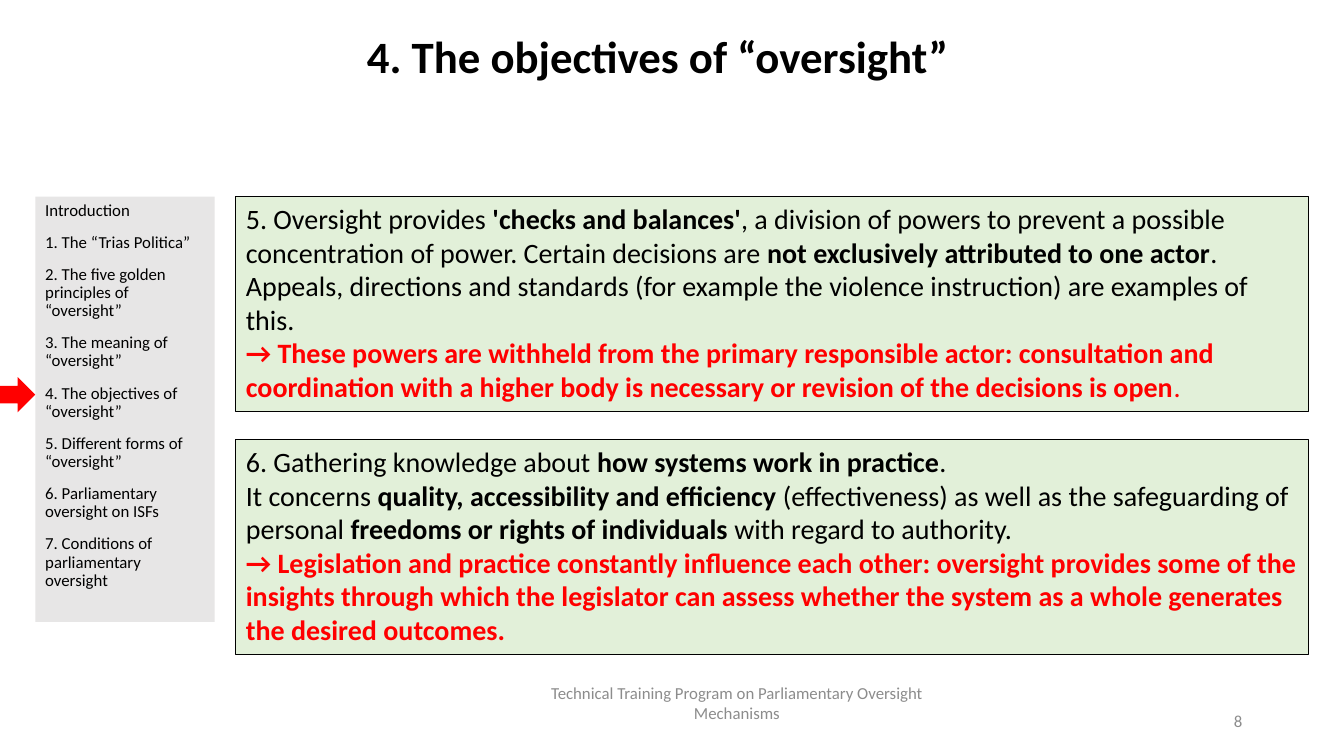
from pptx import Presentation
from pptx.dml.color import RGBColor
from pptx.enum.shapes import MSO_SHAPE
from pptx.enum.text import MSO_ANCHOR, PP_ALIGN
from pptx.util import Inches, Pt

deck = Presentation()
deck.slide_width = Inches(13.33)
deck.slide_height = Inches(7.5)
page = deck.slides.add_slide(deck.slide_layouts[6])


def add_box(left, top, width, height, kind=MSO_SHAPE.RECTANGLE, fill=None, line=None, anchor=MSO_ANCHOR.TOP):
    box = page.shapes.add_shape(kind, Inches(left), Inches(top), Inches(width), Inches(height))
    box.shadow.inherit = False
    if fill:
        box.fill.solid()
        box.fill.fore_color.rgb = RGBColor.from_string(fill)
    else:
        box.fill.background()
    if line:
        box.line.color.rgb = RGBColor.from_string(line)
        box.line.width = Pt(0.75)
    else:
        box.line.fill.background()
    box.text_frame.word_wrap = True
    box.text_frame.vertical_anchor = anchor
    return box


def write(box, text, size=12, color="000000", align=PP_ALIGN.LEFT, spacing=1.0, before=0):
    para = box.text_frame.paragraphs[0]
    if para.runs:
        para = box.text_frame.add_paragraph()
        para.space_before = Pt(before)
    para.alignment = align
    para.line_spacing = spacing
    for index, part in enumerate(text.split("**")):
        if part:
            span = para.add_run()
            span.text = part
            span.font.name = "Calibri"
            span.font.size = Pt(size)
            span.font.bold = index % 2 == 1
            span.font.color.rgb = RGBColor.from_string(color)


footer = add_box(5.06, 6.77, 4.5, 0.4, anchor=MSO_ANCHOR.MIDDLE)
write(footer, "Technical Training Program on Parliamentary Oversight Mechanisms",
      color="8C8C8C", align=PP_ALIGN.CENTER)
number = add_box(9.42, 6.95, 3, 0.4, anchor=MSO_ANCHOR.MIDDLE)
write(number, "8", color="8C8C8C", align=PP_ALIGN.RIGHT)

agenda = add_box(0.35, 1.95, 1.78, 4.22, fill="E7E6E6")
for topic in [
    "Introduction",
    "1. The “Trias Politica”",
    "2. The five golden principles of “oversight”",
    "3. The meaning of “oversight”",
    "4. The objectives of “oversight”",
    "5. Different forms of “oversight”",
    "6. Parliamentary oversight on ISFs",
    "7. Conditions of parliamentary oversight",
]:
    write(agenda, topic, spacing=0.9, before=10)
add_box(-0.11, 3.74, 0.46, 0.35, kind=MSO_SHAPE.RIGHT_ARROW, fill="FF0000")

title = add_box(3, 0.3, 7.05, 1.25)
write(title, "**4. The objectives of “oversight”**", size=32, align=PP_ALIGN.CENTER, spacing=0.9)

objectives = [
    (1.95, [
        "5. Oversight provides **'checks and balances'**, a division of powers to prevent a possible "
        "concentration of power. Certain decisions are **not exclusively attributed to one actor**. "
        "Appeals, directions and standards (for example the violence instruction) are examples of this.",
    ], "**→ These powers are withheld from the primary responsible actor: consultation and "
       "coordination with a higher body is necessary or revision of the decisions is open**."),
    (4.36, [
        "6. Gathering knowledge about **how systems work in practice**.",
        "It concerns **quality, accessibility and efficiency **(effectiveness) as well as the "
        "safeguarding of personal **freedoms or rights of individuals **with regard to authority.",
    ], "**→ Legislation and practice constantly influence each other: oversight provides some of the "
       "insights through which the legislator can assess whether the system as a whole generates "
       "the desired outcomes.**"),
]
for top, statements, conclusion in objectives:
    panel = add_box(2.34, top, 10.64, 2.13, fill="E2F0D9", line="000000")
    for statement in statements:
        write(panel, statement, size=20)
    write(panel, conclusion, size=20, color="FF0000")

deck.save("out.pptx")
